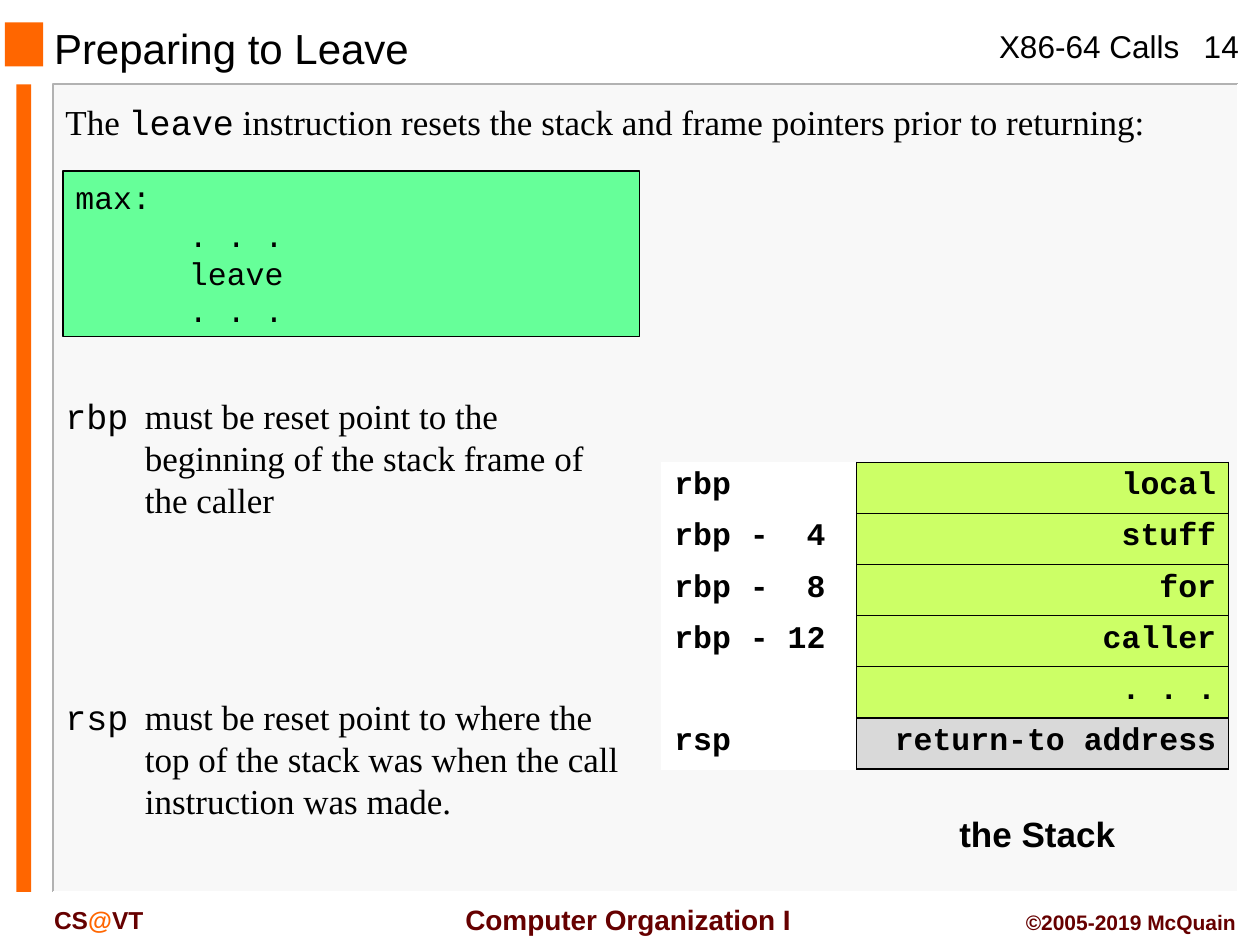
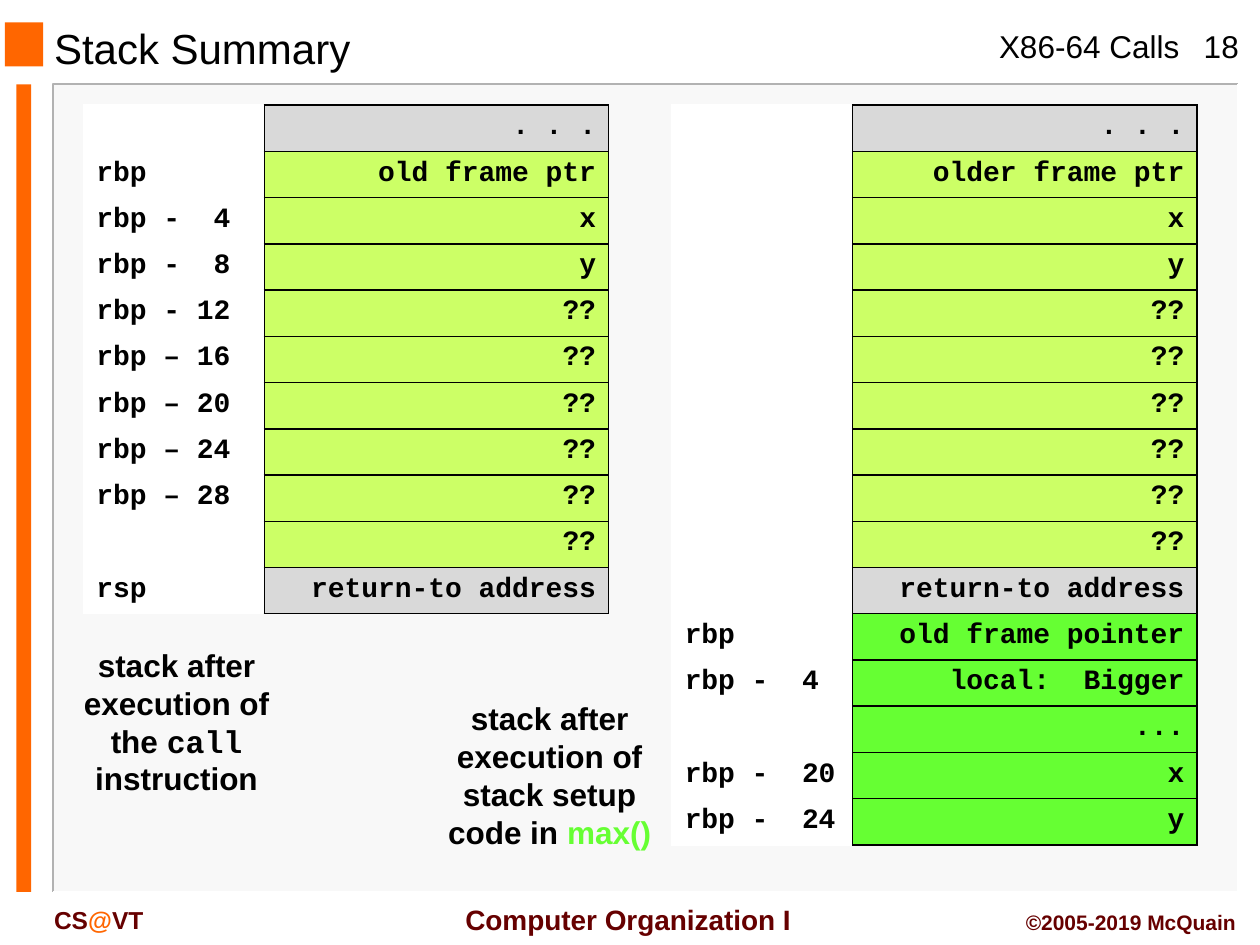
import pptx
import pptx.dml.color
import pptx.enum.shapes
import pptx.enum.text
import pptx.oxml.ns
import pptx.util
from lxml import etree

Cm = pptx.util.Cm
Pt = pptx.util.Pt
qn = pptx.oxml.ns.qn
ALIGN = pptx.enum.text.PP_ALIGN
ANCHOR = pptx.enum.text.MSO_ANCHOR
RECTANGLE = pptx.enum.shapes.MSO_SHAPE.RECTANGLE

COLORS = {
    "text": "000000",
    "white": "FFFFFF",
    "panel": "F8F8F8",
    "panel_edge": "B2B2B2",
    "accent": "FF6600",
    "footer": "660000",
    "code": "66FF99",
    "caller": "CCFF66",
    "callee": "66FF33",
    "boundary": "D9D9D9",
}
SANS, SERIF, MONO = "Arial", "Times New Roman", "Courier New"
SLIDE_BOX = (0, 0, 25.4, 19.05)
PANEL_BOX = (1.07, 1.7, 23.88, 16.28)
CODE_INDENT = 2.29
NOTE_INDENT = 1.6


def rgb(name):
    return pptx.dml.color.RGBColor.from_string(COLORS[name])


def add_run(paragraph, text, size, font=SANS, color="text", bold=False):
    run = paragraph.add_run()
    run.text = text
    run.font.name = font
    run.font.size = Pt(size)
    run.font.bold = bold
    run.font.color.rgb = rgb(color)


def set_indent(paragraph, margin, first_line=0):
    properties = paragraph._p.get_or_add_pPr()
    properties.set("marL", str(Cm(margin)))
    properties.set("indent", str(Cm(first_line)))


def add_text(slide, box, runs, size, align=ALIGN.LEFT, anchor=ANCHOR.TOP, bold=False):
    shape = slide.shapes.add_textbox(*map(Cm, box))
    frame = shape.text_frame
    frame.word_wrap = True
    frame.vertical_anchor = anchor
    paragraph = frame.paragraphs[0]
    paragraph.alignment = align
    for text, font, color in runs:
        add_run(paragraph, text, size, font, color, bold)
    return paragraph


def add_rectangle(slide, box, fill, line=None):
    shape = slide.shapes.add_shape(RECTANGLE, *map(Cm, box))
    shape.shadow.inherit = False
    shape.fill.solid()
    shape.fill.fore_color.rgb = rgb(fill)
    if line:
        shape.line.color.rgb = rgb(line)
        shape.line.width = Pt(0.75)
    else:
        shape.line.fill.background()
    return shape


def add_edge(slide, points, color):
    start, *rest = [(Cm(x), Cm(y)) for x, y in points]
    builder = slide.shapes.build_freeform(*start)
    builder.add_line_segments(rest, close=False)
    shape = builder.convert_to_shape()
    shape.shadow.inherit = False
    shape.fill.background()
    shape.line.color.rgb = rgb(color)
    shape.line.width = Pt(1)


def add_panel(slide, box):
    left, top, width, height = box
    right, bottom = left + width, top + height
    add_rectangle(slide, box, "panel")
    add_edge(slide, [(right, top), (left, top), (left, bottom)], "panel_edge")
    add_edge(slide, [(right, top), (right, bottom), (left, bottom)], "white")
    add_rectangle(slide, (left - 0.74, top, 0.3, height), "accent")


def add_header(slide, box, title, number):
    left, top, width, _ = box
    right = left + width
    add_rectangle(slide, (left + 0.1, top + 0.45, 0.77, 0.89), "accent")
    add_text(slide, (left + 0.84, top + 0.48, 16.08, 0.97),
             [(title, SANS, "text")], 24, anchor=ANCHOR.MIDDLE)
    add_text(slide, (right - 5.51, top + 0.43, 4.3, 1.02),
             [("X86-64 Calls", SANS, "text")], 18)
    add_text(slide, (right - 1.63, top + 0.43, 1.7, 1.02),
             [(number, SANS, "text")], 18, ALIGN.CENTER)


def add_footer(slide, box):
    left, top, width, height = box
    right, bottom = left + width, top + height
    add_text(slide, (left + 8.97, bottom - 0.99, 7.39, 0.94),
             [("Computer Organization I", SANS, "footer")],
             16, ALIGN.CENTER, ANCHOR.MIDDLE, True)
    add_text(slide, (left + 0.84, bottom - 0.94, 3.81, 0.84),
             [("CS", SANS, "footer"), ("@", SANS, "accent"), ("VT", SANS, "footer")],
             14, bold=True)
    add_text(slide, (right - 5.51, bottom - 0.84, 5.28, 0.76),
             [("©2005-2019 McQuain", SANS, "footer")], 12, ALIGN.RIGHT, bold=True)


def add_lecture_slide(presentation, title, number):
    slide = presentation.slides.add_slide(presentation.slide_layouts[6])
    add_panel(slide, PANEL_BOX)
    add_header(slide, SLIDE_BOX, title, number)
    add_footer(slide, SLIDE_BOX)
    return slide


def add_code(slide, box, label, body):
    shape = add_rectangle(slide, box, "code", "text")
    frame = shape.text_frame
    frame.vertical_anchor = ANCHOR.MIDDLE
    for index, text in enumerate([label, *body]):
        paragraph = frame.add_paragraph() if index else frame.paragraphs[0]
        paragraph.alignment = ALIGN.LEFT
        set_indent(paragraph, CODE_INDENT if index else 0)
        add_run(paragraph, text, 18, MONO)


def add_register_note(slide, box, register, note):
    runs = [(register, MONO, "text"), ("\t" + note, SERIF, "text")]
    set_indent(add_text(slide, box, runs, 20), NOTE_INDENT, -NOTE_INDENT)


def set_borders(cell, sides):
    properties = cell._tc.get_or_add_tcPr()
    for index, side in enumerate(sides):
        line = etree.Element(qn("a:ln" + side), w=str(Pt(1)))
        fill = etree.SubElement(line, qn("a:solidFill"))
        etree.SubElement(fill, qn("a:srgbClr"), val=COLORS["text"])
        properties.insert(index, line)


def fill_cell(cell, text, size, align, fill, sides):
    cell.fill.solid()
    cell.fill.fore_color.rgb = rgb(fill)
    set_borders(cell, sides)
    paragraph = cell.text_frame.paragraphs[0]
    paragraph.alignment = align
    if text:
        add_run(paragraph, text, size, MONO, bold=True)
    else:
        etree.SubElement(paragraph._p, qn("a:endParaRPr"), sz=str(size * 100))


def add_stack(slide, box, rows, size):
    left, top, width, row_height = box
    frame = slide.shapes.add_table(len(rows), 2, Cm(left), Cm(top), Cm(width),
                                   Cm(row_height * len(rows)))
    table = frame.table
    table.first_row = table.horz_banding = False
    label_width = width * 0.344
    table.columns[0].width = Cm(label_width)
    table.columns[1].width = Cm(width - label_width)
    for index, (label, value, fill) in enumerate(rows):
        table.rows[index].height = Cm(row_height)
        fill_cell(table.cell(index, 0), label, size, ALIGN.LEFT, "white", "R")
        fill_cell(table.cell(index, 1), value, size, ALIGN.RIGHT, fill, "LRTB")


def stack_rows(labels, values, fill):
    return [(label, value, fill) for label, value in zip(labels, values)]


def build_leave_slide(presentation):
    slide = add_lecture_slide(presentation, "Preparing to Leave", "14")
    add_text(slide, (1.07, 1.91, 23.93, 1.12), [
        ("The ", SERIF, "text"),
        ("leave", MONO, "text"),
        (" instruction resets the stack and frame pointers prior to returning:",
         SERIF, "text"),
    ], 20)
    add_code(slide, (1.27, 3.45, 11.63, 3.33), "max:", [". . .", "leave", ". . ."])
    add_register_note(slide, (1.07, 7.82, 11.86, 2.82), "rbp",
                      "must be reset point to the beginning of the stack frame of the caller")
    add_register_note(slide, (1.07, 13.89, 11.86, 2.82), "rsp",
                      "must be reset point to where the top of the stack was "
                      "when the call instruction was made.")
    rows = stack_rows(["rbp", "rbp -  4", "rbp -  8", "rbp - 12", ""],
                      ["local", "stuff", "for", "caller", ". . ."], "caller")
    rows.append(("rsp", "return-to address", "boundary"))
    add_stack(slide, (13.34, 9.32, 11.43, 1.03), rows, 18)
    add_text(slide, (18.42, 16.26, 4.98, 1.12), [("the Stack", SANS, "text")],
             20, ALIGN.CENTER, bold=True)


def build_summary_slide(presentation):
    slide = add_lecture_slide(presentation, "Stack Summary", "18")
    locals_shown = ["x", "y"] + ["??"] * 6
    frame_labels = ["rbp", "rbp -  4", "rbp -  8", "rbp - 12",
                    *(f"rbp – {offset}" for offset in range(16, 29, 4)), ""]
    top_row = ("", ". . .", "boundary")

    after_call = [top_row,
                  *stack_rows(frame_labels, ["old frame ptr", *locals_shown], "caller"),
                  ("rsp", "return-to address", "boundary")]
    after_setup = [top_row,
                   *stack_rows([""] * 9, ["older frame ptr", *locals_shown], "caller"),
                   ("", "return-to address", "boundary"),
                   *stack_rows(["rbp", "rbp -  4", "", "rbp -  20", "rbp -  24"],
                               ["old frame pointer", "local:  Bigger", "...", "x", "y"],
                               "callee")]
    for left, rows in ((1.69, after_call), (13.55, after_setup)):
        add_stack(slide, (left, 2.12, 10.58, 0.93), rows, 16)

    add_text(slide, (1.07, 12.9, 4.98, 3.33), [
        ("stack after execution of the ", SANS, "text"),
        ("call", MONO, "text"),
        (" instruction", SANS, "text"),
    ], 18, ALIGN.CENTER, bold=True)
    add_text(slide, (8.59, 13.97, 4.98, 3.33), [
        ("stack after execution of stack setup code in ", SANS, "text"),
        ("max()", SANS, "callee"),
    ], 18, ALIGN.CENTER, bold=True)


def main():
    presentation = pptx.Presentation()
    presentation.slide_width = Cm(SLIDE_BOX[2])
    presentation.slide_height = Cm(SLIDE_BOX[3])
    build_leave_slide(presentation)
    build_summary_slide(presentation)
    presentation.save("out.pptx")


if __name__ == "__main__":
    main()
